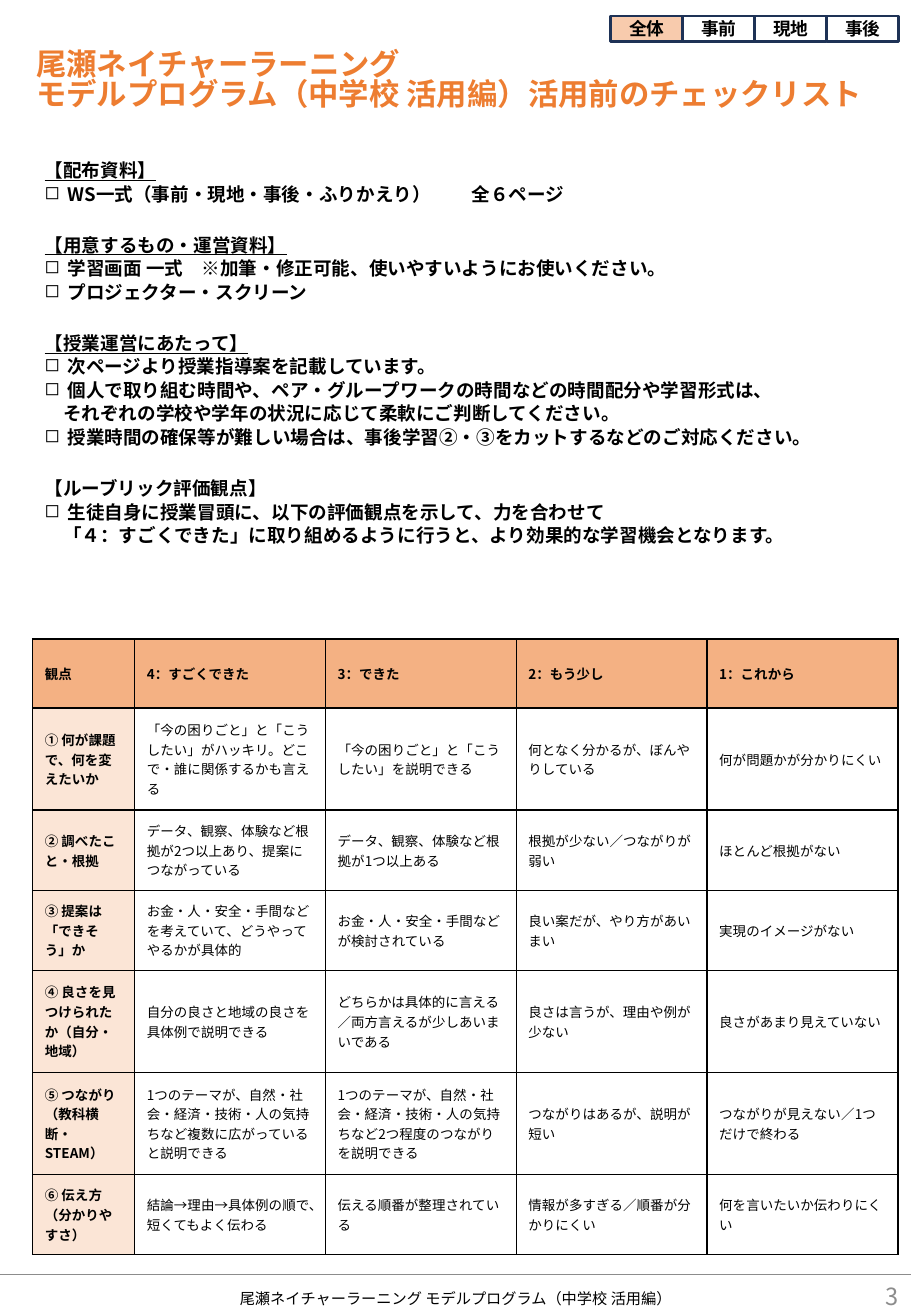
from pptx import Presentation
from pptx.dml.color import RGBColor
from pptx.enum import shapes, text
from pptx.oxml import ns
from pptx.util import Pt
from lxml import etree

FONT = "Noto Sans CJK JP"
HUES = {"title": "ED7D31", "black": "000000", "white": "FFFFFF", "gray": "8C8C8C",
        "navy": "1E3256", "tab": "F8CBAD", "head": "F4B183", "side": "FBE5D6"}
LEFT, MID, RIGHT = text.PP_ALIGN.LEFT, text.PP_ALIGN.CENTER, text.PP_ALIGN.RIGHT

TABS = ["全体", "事前", "現地", "事後"]
NOTES = [
    ("head", "【配布資料】"),
    ("check", "WS一式（事前・現地・事後・ふりかえり）\t全６ページ"),
    ("head", "【用意するもの・運営資料】"),
    ("check", "学習画面 一式　※加筆・修正可能、使いやすいようにお使いください。"),
    ("check", "プロジェクター・スクリーン"),
    ("head", "【授業運営にあたって】"),
    ("check", "次ページより授業指導案を記載しています。"),
    ("check", "個人で取り組む時間や、ペア・グループワークの時間などの時間配分や学習形式は、"),
    ("more", "それぞれの学校や学年の状況に応じて柔軟にご判断してください。"),
    ("check", "授業時間の確保等が難しい場合は、事後学習②・③をカットするなどのご対応ください。"),
    ("plain", "【ルーブリック評価観点】"),
    ("check", "生徒自身に授業冒頭に、以下の評価観点を示して、力を合わせて"),
    ("more", "「４：すごくできた」に取り組めるように行うと、より効果的な学習機会となります。"),
]
GOALS = [
    ["観点", "4：すごくできた", "3：できた", "2：もう少し", "1：これから"],
    ["① 何が課題で、何を変えたいか",
     "「今の困りごと」と「こうしたい」がハッキリ。どこで・誰に関係するかも言える",
     "「今の困りごと」と「こうしたい」を説明できる",
     "何となく分かるが、ぼんやりしている", "何が問題かが分かりにくい"],
    ["② 調べたこと・根拠",
     "データ、観察、体験など根拠が2つ以上あり、提案につながっている",
     "データ、観察、体験など根拠が1つ以上ある",
     "根拠が少ない／つながりが弱い", "ほとんど根拠がない"],
    ["③ 提案は「できそう」か",
     "お金・人・安全・手間などを考えていて、どうやってやるかが具体的",
     "お金・人・安全・手間などが検討されている",
     "良い案だが、やり方があいまい", "実現のイメージがない"],
    ["④ 良さを見つけられたか（自分・地域）",
     "自分の良さと地域の良さを具体例で説明できる",
     "どちらかは具体的に言える／両方言えるが少しあいまいである",
     "良さは言うが、理由や例が少ない", "良さがあまり見えていない"],
    ["⑤ つながり（教科横断・STEAM）",
     "1つのテーマが、自然・社会・経済・技術・人の気持ちなど複数に広がっていると説明できる",
     "1つのテーマが、自然・社会・経済・技術・人の気持ちなど2つ程度のつながりを説明できる",
     "つながりはあるが、説明が短い", "つながりが見えない／1つだけで終わる"],
    ["⑥ 伝え方（分かりやすさ）",
     "結論→理由→具体例の順で、短くてもよく伝わる",
     "伝える順番が整理されている",
     "情報が多すぎる／順番が分かりにくい", "何を言いたいか伝わりにくい"],
]
WIDTHS = [60.5] + [113.1] * 4
HEIGHTS = [41, 60.5, 47.5, 47.5, 60.5, 60.5, 47.5]


def color(name):
    return RGBColor.from_string(HUES[name])


def add_node(parent, tag, **attrs):
    return etree.SubElement(parent, ns.qn(tag), attrs)


def style(para, size, hue="black", bold=False, line=False):
    for run in para.runs:
        font = run.font
        font.size, font.bold, font.underline = Pt(size), bold, line
        font.color.rgb = color(hue)
        font.name = FONT
        add_node(font._element, "a:ea", typeface=FONT)


def add_label(slide, words, spot, size, hue="black", bold=False, align=LEFT,
              anchor=text.MSO_ANCHOR.MIDDLE, pitch=None):
    frame = slide.shapes.add_textbox(*map(Pt, spot)).text_frame
    frame.word_wrap = True
    frame.vertical_anchor = anchor
    para = frame.paragraphs[0]
    para.text = words
    para.alignment = align
    para.line_spacing = pitch
    style(para, size, hue, bold)


def add_tab(slide, words, left, fill):
    box = slide.shapes.add_shape(shapes.MSO_SHAPE.RECTANGLE,
                                 Pt(left), Pt(9.4), Pt(42.7), Pt(15.1))
    box.shadow.inherit = False
    if fill:
        box.fill.solid()
        box.fill.fore_color.rgb = color(fill)
    else:
        box.fill.background()
    box.line.color.rgb = color("navy")
    box.line.width = Pt(1.5)
    frame = box.text_frame
    frame.margin_left = frame.margin_right = frame.margin_top = frame.margin_bottom = 0
    frame.vertical_anchor = text.MSO_ANCHOR.MIDDLE
    para = frame.paragraphs[0]
    para.text = words
    para.alignment = MID
    style(para, 10.5, bold=True)


def add_notes(slide):
    frame = slide.shapes.add_textbox(Pt(19.4), Pt(92.9), Pt(497.5), Pt(265.7)).text_frame
    frame.word_wrap = True
    for i, (kind, words) in enumerate(NOTES):
        para = frame.add_paragraph() if i else frame.paragraphs[0]
        para.text = words
        para.line_spacing = 0.83
        para.space_after = Pt(3)
        if i and kind in ("head", "plain"):
            para.space_before = Pt(16.2)
        props = para._p.get_or_add_pPr()
        if kind == "check":
            props.set("marL", str(Pt(13.5)))
            props.set("indent", str(Pt(-13.5)))
            add_node(props, "a:buChar", char="◻")
        elif kind == "more":
            props.set("marL", str(Pt(11)))
        if "\t" in words:
            stops = add_node(props, "a:tabLst")
            add_node(stops, "a:tab", pos=str(Pt(253)), algn="l")
        style(para, 11, bold=True, line=kind == "head")


def add_edges(cell):
    props = cell._tc.get_or_add_tcPr()
    for side in ("L", "R", "T", "B"):
        edge = add_node(props, "a:ln" + side, w=str(Pt(1)))
        add_node(add_node(edge, "a:solidFill"), "a:srgbClr", val=HUES["black"])


def add_goals(slide):
    grid = slide.shapes.add_table(len(GOALS), len(WIDTHS), Pt(19.4), Pt(378.6),
                                  Pt(sum(WIDTHS)), Pt(sum(HEIGHTS))).table
    grid.first_row = grid.horz_banding = False
    for col, width in zip(grid.columns, WIDTHS):
        col.width = Pt(width)
    for r, (row, height) in enumerate(zip(GOALS, HEIGHTS)):
        grid.rows[r].height = Pt(height)
        for c, words in enumerate(row):
            cell = grid.cell(r, c)
            cell.vertical_anchor = text.MSO_ANCHOR.MIDDLE
            add_edges(cell)
            cell.fill.solid()
            cell.fill.fore_color.rgb = color("head" if r == 0 else "side" if c == 0 else "white")
            para = cell.text_frame.paragraphs[0]
            para.text = words
            style(para, 8, bold=r == 0 or c == 0)


def add_rule(slide, y):
    rule = slide.shapes.add_connector(shapes.MSO_CONNECTOR.STRAIGHT,
                                      Pt(0), Pt(y), Pt(540), Pt(y))
    rule.line.color.rgb = color("gray")
    rule.line.width = Pt(0.5)
    add_node(rule._element.spPr, "a:effectLst")


def main():
    deck = Presentation()
    deck.slide_width, deck.slide_height = Pt(540), Pt(779.8)
    slide = deck.slides.add_slide(deck.slide_layouts[6])
    add_rule(slide, 755)
    add_label(slide, "3", (418.3, 755.3, 121.7, 25.2), 14, "gray", align=RIGHT)
    add_label(slide, "尾瀬ネイチャーラーニング\vモデルプログラム（中学校 活用編）活用前のチェックリスト",
              (14.4, 26.6, 561.6, 51.1), 18, "title", True,
              anchor=text.MSO_ANCHOR.TOP, pitch=0.83)
    add_notes(slide)
    for i, words in enumerate(TABS):
        add_tab(slide, words, 362 + 42.7 * i, None if i else "tab")
    add_label(slide, "尾瀬ネイチャーラーニング モデルプログラム（中学校 活用編）",
              (0, 756.7, 540, 25.2), 9, align=MID)
    add_goals(slide)
    deck.save("out.pptx")


if __name__ == "__main__":
    main()
